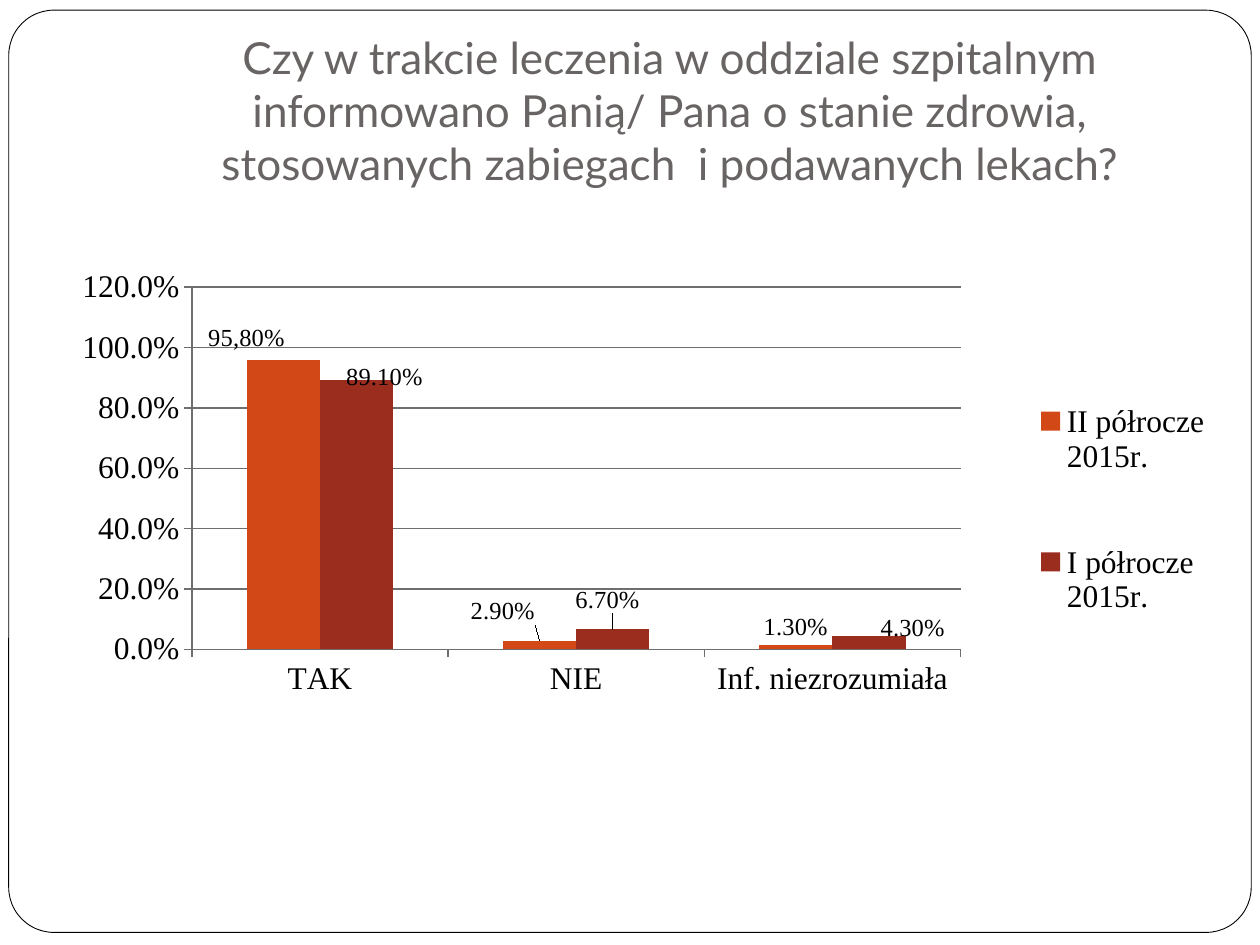
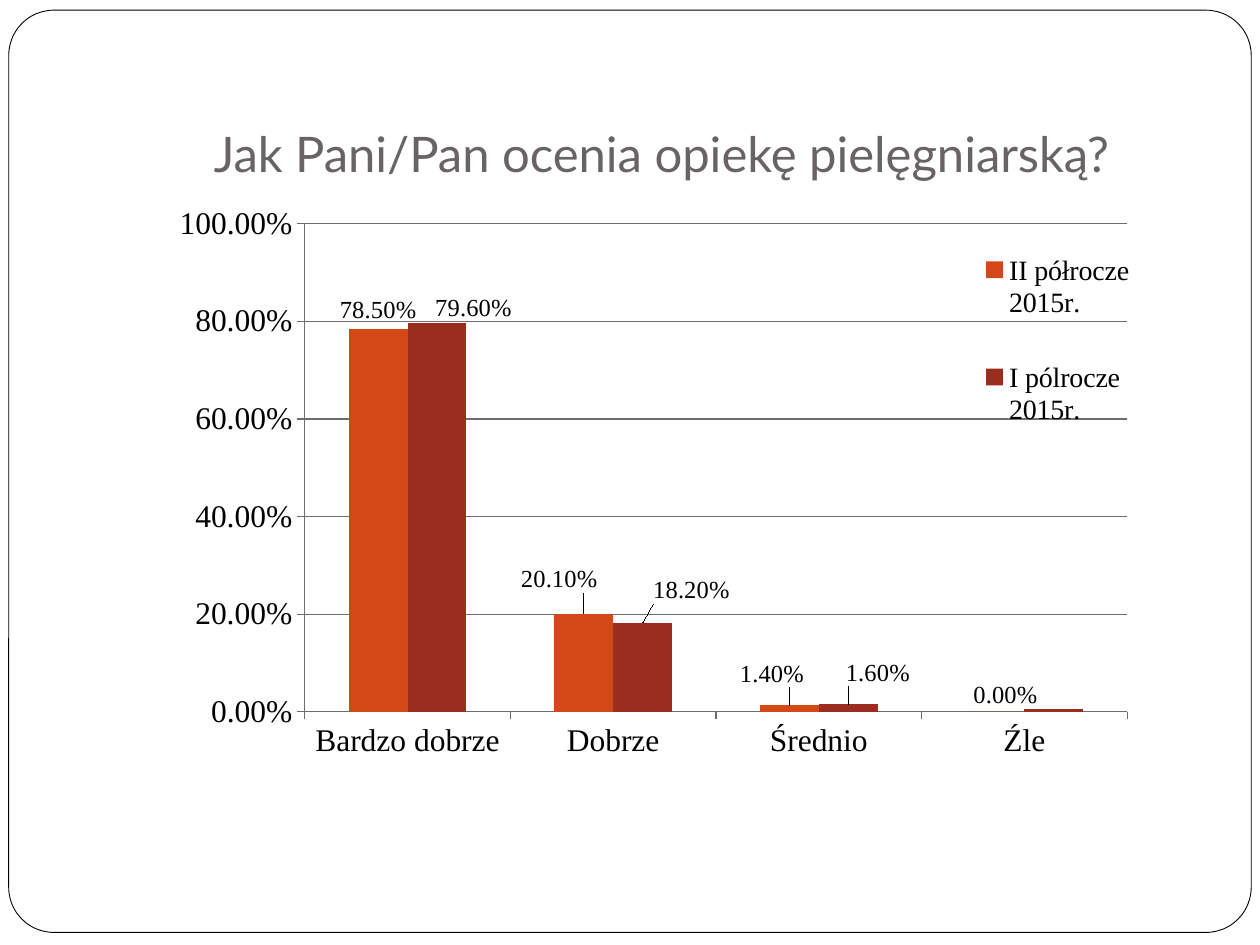
from lxml import etree
from pptx import Presentation
from pptx.chart.data import CategoryChartData
from pptx.dml.color import RGBColor
from pptx.enum.chart import XL_CHART_TYPE as ChartType, XL_LABEL_POSITION as LabelPos
from pptx.enum.chart import XL_LEGEND_POSITION as LegendPos, XL_TICK_MARK as TickMark
from pptx.enum.shapes import MSO_SHAPE as Preset
from pptx.enum.text import MSO_ANCHOR as Anchor, PP_ALIGN as Align
from pptx.oxml.ns import qn
from pptx.util import Pt

WHITE = RGBColor(0xFF, 0xFF, 0xFF)
BLACK = RGBColor(0x00, 0x00, 0x00)
TITLE_GREY = RGBColor(0x69, 0x64, 0x64)
GRID_GREY = RGBColor(0x6E, 0x6E, 0x6E)
ORANGE = RGBColor(0xD3, 0x48, 0x17)
BRICK = RGBColor(0x9B, 0x2D, 0x1F)
TITLE_FONT, CHART_FONT = "Lato", "Times New Roman"
PERCENT = "0.00%"
DELETED = "deleted"

# Each label shift is (right, down) in points from the top of its bar
SLIDES = [
    {
        "title": "Czy w trakcie leczenia w oddziale szpitalnym informowano Panią/ Pana "
                 "o stanie zdrowia, stosowanych zabiegach  i podawanych lekach?",
        "title_box": (93.6, 31.7, 578.2, 83.5), "title_size": 25.2,
        "chart_box": (25.2, 145.4, 681.1, 374.4),
        "plot": (0.124, 0.05, 0.645, 0.553), "legend": (0.82, 0.12, 0.17, 0.54),
        "legend_size": 18, "axis_max": 1.2, "axis_format": "0.0%",
        "categories": ["TAK", "NIE", "Inf. niezrozumiała"],
        "series": [
            ("II półrocze 2015r.", (0.958, 0.029, 0.013), [(-21, -2), (-21, -6), None]),
            ("I półrocze 2015r.", (0.891, 0.067, 0.043), [(16, 9), (-3, -6), (25, 6)]),
        ],
        "custom_labels": {(0, 0): "95,80%"},
    },
    {
        "title": "Jak Pani/Pan ocenia opiekę pielęgniarską?",
        "title_box": (72, 21.6, 612, 90), "title_size": 28,
        "chart_box": (72, 113.8, 612, 360),
        "plot": (0.167, 0.039, 0.768, 0.775), "legend": (0.79, 0.02, 0.16, 0.41),
        "legend_size": 16, "axis_max": 1, "axis_format": PERCENT,
        "categories": ["Bardzo dobrze", "Dobrze", "Średnio", "Źle"],
        "series": [
            ("II półrocze 2015r.", (0.785, 0.201, 0.014, 0),
             [None, (-14, -9), (-10, -7), (6, 1)]),
            ("I pólrocze 2015r.", (0.796, 0.182, 0.016, 0.006),
             [(21, 2), (28, -8), (17, -7), DELETED]),
        ],
        "custom_labels": {},
    },
]


def set_layout(parent, index, values, target=None):
    """Give a chart element a manual layout: x, y and, for a whole area, w, h."""
    for old in parent.findall(qn("c:layout")):
        parent.remove(old)
    layout = etree.Element(qn("c:layout"))
    manual = etree.SubElement(layout, qn("c:manualLayout"))
    settings = [("layoutTarget", target)] if target else []
    if len(values) == 4:
        settings += [("xMode", "edge"), ("yMode", "edge")]
    settings += zip("xywh", values)
    for tag, value in settings:
        etree.SubElement(manual, qn(f"c:{tag}")).set("val", str(value))
    parent.insert(index, layout)


def style_font(font, size, color=BLACK, name=CHART_FONT):
    font.size, font.name, font.bold = Pt(size), name, False
    font.color.rgb = color


deck = Presentation()
deck.slide_width, deck.slide_height = Pt(720), Pt(540)

for content in SLIDES:
    page = deck.slides.add_slide(deck.slide_layouts[6])

    # Rounded frame
    frame = page.shapes.add_shape(Preset.ROUNDED_RECTANGLE, Pt(5), Pt(5.8), Pt(710), Pt(527))
    frame.adjustments[0] = 0.049
    frame.shadow.inherit = False
    frame.fill.solid()
    frame.fill.fore_color.rgb = WHITE
    frame.line.color.rgb = BLACK
    frame.line.width = Pt(0.5)

    # Title
    box = page.shapes.add_textbox(*map(Pt, content["title_box"]))
    text = box.text_frame
    frame_format = {"word_wrap": True, "vertical_anchor": Anchor.BOTTOM,
                    "margin_left": Pt(7.2), "margin_right": Pt(7.2),
                    "margin_top": Pt(3.6), "margin_bottom": Pt(7.2)}
    for name, value in frame_format.items():
        setattr(text, name, value)
    para = text.paragraphs[0]
    para.alignment = Align.CENTER
    span = para.add_run()
    span.text = content["title"]
    style_font(span.font, content["title_size"], TITLE_GREY, TITLE_FONT)

    # Column chart
    data = CategoryChartData(number_format=PERCENT)
    data.categories = content["categories"]
    for name, values, shifts in content["series"]:
        data.add_series(name, values)
    chart_box = content["chart_box"]
    chart = page.shapes.add_chart(ChartType.COLUMN_CLUSTERED, *map(Pt, chart_box), data).chart
    chart.has_title = False
    style_font(chart.font, 18)
    plot = chart.plots[0]
    plot.vary_by_categories, plot.gap_width, plot.overlap = False, 150, 0

    # Axes
    value_axis = chart.value_axis
    set_layout(value_axis._element.getparent(), 0, content["plot"], "inner")
    value_axis.minimum_scale, value_axis.maximum_scale = 0, content["axis_max"]
    value_axis.major_unit = 0.2
    value_axis.has_major_gridlines = True
    value_axis.tick_labels.number_format = content["axis_format"]
    value_axis.tick_labels.number_format_is_linked = False
    for axis in (value_axis, chart.category_axis):
        axis.major_tick_mark, axis.minor_tick_mark = TickMark.OUTSIDE, TickMark.NONE
        style_font(axis.tick_labels.font, 18)
    for ruled in (value_axis, chart.category_axis, value_axis.major_gridlines):
        ruled.format.line.color.rgb = GRID_GREY
        ruled.format.line.width = Pt(0.75)

    # Legend
    chart.has_legend = True
    legend = chart.legend
    legend.position, legend.include_in_layout = LegendPos.RIGHT, False
    style_font(legend.font, content["legend_size"])
    set_layout(legend._element, 1, content["legend"])

    # Series and their labels
    for row, (series, color) in enumerate(zip(plot.series, (ORANGE, BRICK))):
        series.format.fill.solid()
        series.format.fill.fore_color.rgb = color
        series.invert_if_negative = False
        labels = series.data_labels
        labels.show_value, labels.position = True, LabelPos.OUTSIDE_END
        labels.number_format, labels.number_format_is_linked = PERCENT, False
        style_font(labels.font, 14)

        shifts = content["series"][row][2]
        for column, shift in enumerate(shifts):
            if shift is None:
                continue
            label = series.points[column].data_label
            label.position = LabelPos.OUTSIDE_END
            custom = content["custom_labels"].get((row, column))
            if custom:
                span = label.text_frame.paragraphs[0].add_run()
                span.text = custom
                style_font(span.font, 14)
            else:
                style_font(label.font, 14)

            entry = next(item for item in series._element.iter(qn("c:dLbl"))
                         if item.find(qn("c:idx")).get("val") == str(column))
            if shift == DELETED:
                for child in list(entry)[1:]:
                    entry.remove(child)
                etree.SubElement(entry, qn("c:delete")).set("val", "1")
                continue
            if not custom:
                number = etree.Element(qn("c:numFmt"), formatCode=PERCENT, sourceLinked="0")
                entry.insert(1, number)
            right, down = shift
            set_layout(entry, 1, (round(right / chart_box[2], 4), round(down / chart_box[3], 4)))

deck.save("out.pptx")
